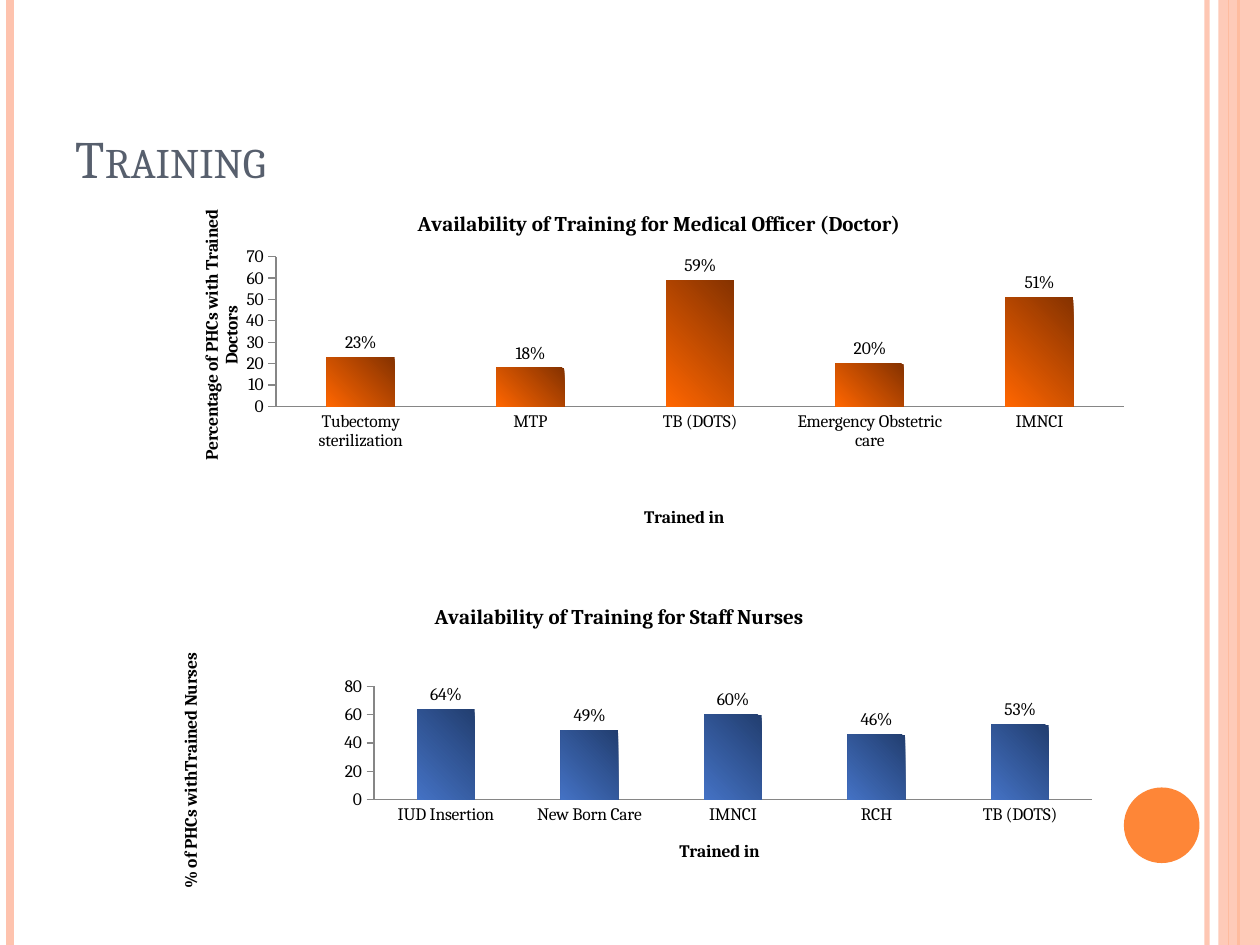
from lxml.etree import SubElement
from pptx import Presentation
from pptx.chart.data import CategoryChartData as ChartData
from pptx.dml.color import RGBColor as Color
from pptx.enum.chart import XL_CHART_TYPE as ChartType, XL_LABEL_POSITION as LabelPosition
from pptx.enum.chart import XL_TICK_MARK as Tick
from pptx.enum.shapes import MSO_CONNECTOR as Connector, MSO_SHAPE as Shape
from pptx.enum.text import MSO_ANCHOR as Anchor, PP_ALIGN as Align
from pptx.oxml import parse_xml
from pptx.oxml.ns import nsdecls, qn
from pptx.util import Inches, Pt

THEME = dict(
    font="Cambria", title_size=30, chart_title_size=12, text_size=10,
    title="575F6D", text="000000", axis="868686", accent="FE8637", pale="FEC3AE",
    doctors=("FF6600", "853200"), nurses=("4472C4", "223E70"),
)


def place(element, index, x, y, width=None, height=None):
    for old in element.findall(qn("c:layout")):
        element.remove(old)
    layout = parse_xml(f"<c:layout {nsdecls('c')}/>")
    manual = SubElement(layout, qn("c:manualLayout"))
    settings = [("xMode", "edge"), ("yMode", "edge"), ("x", x), ("y", y)]
    if width:
        settings = [("layoutTarget", "inner")] + settings + [("w", width), ("h", height)]
    for name, value in settings:
        SubElement(manual, qn(f"c:{name}")).set("val", str(value))
    element.insert(index, layout)


def write_title(owner, text, size, position):
    title = owner.chart_title if hasattr(owner, "chart_title") else owner.axis_title
    para = title.text_frame.paragraphs[0]
    para.text = text
    para.font.name = THEME["font"]
    para.font.size = Pt(size)
    para.font.bold = True
    para.font.color.rgb = Color.from_string(THEME["text"])
    place(title._element, 1, *position)


deck = Presentation()
deck.slide_width, deck.slide_height = Inches(10), Inches(7.5)
WIDTH, HEIGHT = deck.slide_width, deck.slide_height
page = deck.slides.add_slide(deck.slide_layouts[5])

stripes = [(0.958, "pale", 3, 93), (0.008, "pale", 4.5, 100),
           (0.983, "accent", 1.5, 100), (0.975, "accent", 0.75, 100)]
for share, color, weight, opacity in stripes:
    x = int(WIDTH * share)
    stripe = page.shapes.add_connector(Connector.STRAIGHT, x, 0, x, HEIGHT)
    stripe.line.color.rgb = Color.from_string(THEME[color])
    stripe.line.width = Pt(weight)
    if opacity < 100:
        tint = stripe._element.spPr.find(".//" + qn("a:srgbClr"))
        SubElement(tint, qn("a:alpha")).set("val", str(opacity * 1000))
    SubElement(stripe._element.spPr, qn("a:effectLst"))

ornaments = [(Shape.RECTANGLE, (9.67, 0, 0.33, 7.5), "pale", 87),
             (Shape.OVAL, (8.92, 6.25, 0.6, 0.6), "accent", 100)]
for kind, bounds, color, opacity in ornaments:
    ornament = page.shapes.add_shape(kind, *map(Inches, bounds))
    ornament.shadow.inherit = False
    ornament.fill.solid()
    ornament.fill.fore_color.rgb = Color.from_string(THEME[color])
    ornament.line.fill.background()
    if opacity < 100:
        tint = ornament._element.spPr.find(".//" + qn("a:srgbClr"))
        SubElement(tint, qn("a:alpha")).set("val", str(opacity * 1000))

heading = page.shapes.title
heading.left, heading.top = int(WIDTH * 0.05), int(HEIGHT * 0.04)
heading.width, heading.height = Inches(8.17), Inches(1.25)
heading.text_frame.vertical_anchor = Anchor.BOTTOM
para = heading.text_frame.paragraphs[0]
para.alignment = Align.LEFT
span = para.add_run()
span.text = "Training"
span.font.name = THEME["font"]
span.font.size = Pt(THEME["title_size"])
span.font.color.rgb = Color.from_string(THEME["title"])
span.font._element.set("cap", "small")

charts = [
    dict(bounds=(1.25, 1.5, 7.83, 2.83), colors="doctors", top=70, step=10,
         title="Availability of Training for Medical Officer (Doctor)", title_at=(0.26, 0.05),
         value_title="Percentage of PHCs with Trained Doctors", value_at=(0.04, 0.05),
         category_at=(0.49, 0.88), plot=(0.12, 0.19, 0.86, 0.42),
         data={"Tubectomy sterilization": 23, "MTP": 18, "TB (DOTS)": 59,
               "Emergency Obstetric care": 20, "IMNCI": 51}),
    dict(bounds=(1.17, 4.63, 7.5, 2.64), colors="nurses", top=80, step=20,
         title="Availability of Training for Staff Nurses", title_at=(0.3, 0.05),
         value_title="% of PHCs withTrained Nurses", value_at=(0.03, 0.2),
         category_at=(0.56, 0.76), plot=(0.24, 0.31, 0.76, 0.34),
         data={"IUD Insertion": 64, "New Born Care": 49, "IMNCI": 60,
               "RCH": 46, "TB (DOTS)": 53}),
]
for item in charts:
    data = ChartData(number_format="0")
    data.categories = list(item["data"])
    data.add_series("Series 1", list(item["data"].values()))
    chart = page.shapes.add_chart(
        ChartType.COLUMN_CLUSTERED, *map(Inches, item["bounds"]), data).chart
    chart.has_legend = False
    chart.font.name = THEME["font"]
    chart.font.size = Pt(THEME["text_size"])
    chart.font.color.rgb = Color.from_string(THEME["text"])

    category, value = chart.category_axis, chart.value_axis
    write_title(chart, item["title"], THEME["chart_title_size"], item["title_at"])
    write_title(category, "Trained in", THEME["text_size"], item["category_at"])
    write_title(value, item["value_title"], THEME["text_size"], item["value_at"])
    for axis in (category, value):
        axis.has_major_gridlines = False
        axis.minor_tick_mark = Tick.NONE
        axis.format.line.color.rgb = Color.from_string(THEME["axis"])
    category.major_tick_mark = Tick.NONE
    value.major_tick_mark = Tick.OUTSIDE
    value.minimum_scale, value.maximum_scale = 0, item["top"]
    value.major_unit = item["step"]
    value.tick_labels.number_format = "0"
    value.tick_labels.number_format_is_linked = False

    plot = chart.plots[0]
    plot.gap_width = 150
    plot.vary_by_categories = False
    plot.has_data_labels = True
    labels = plot.data_labels
    labels.show_value = True
    labels.number_format = '0"%"'
    labels.number_format_is_linked = False
    labels.position = LabelPosition.OUTSIDE_END
    place(chart._chartSpace.find(".//" + qn("c:plotArea")), 0, *item["plot"])

    inner, outer = THEME[item["colors"]]
    bars = plot.series[0]
    bars.invert_if_negative = False
    bars.format.fill.background()
    shading = bars._element.find(qn("c:spPr"))
    shading.replace(shading.find(qn("a:noFill")), parse_xml(
        f'<a:gradFill {nsdecls("a")} rotWithShape="1"><a:gsLst>'
        f'<a:gs pos="0"><a:srgbClr val="{inner}"/></a:gs>'
        f'<a:gs pos="100000"><a:srgbClr val="{outer}"/></a:gs></a:gsLst>'
        '<a:path path="circle"><a:fillToRect t="100000" r="100000"/></a:path></a:gradFill>'))

deck.save("out.pptx")
